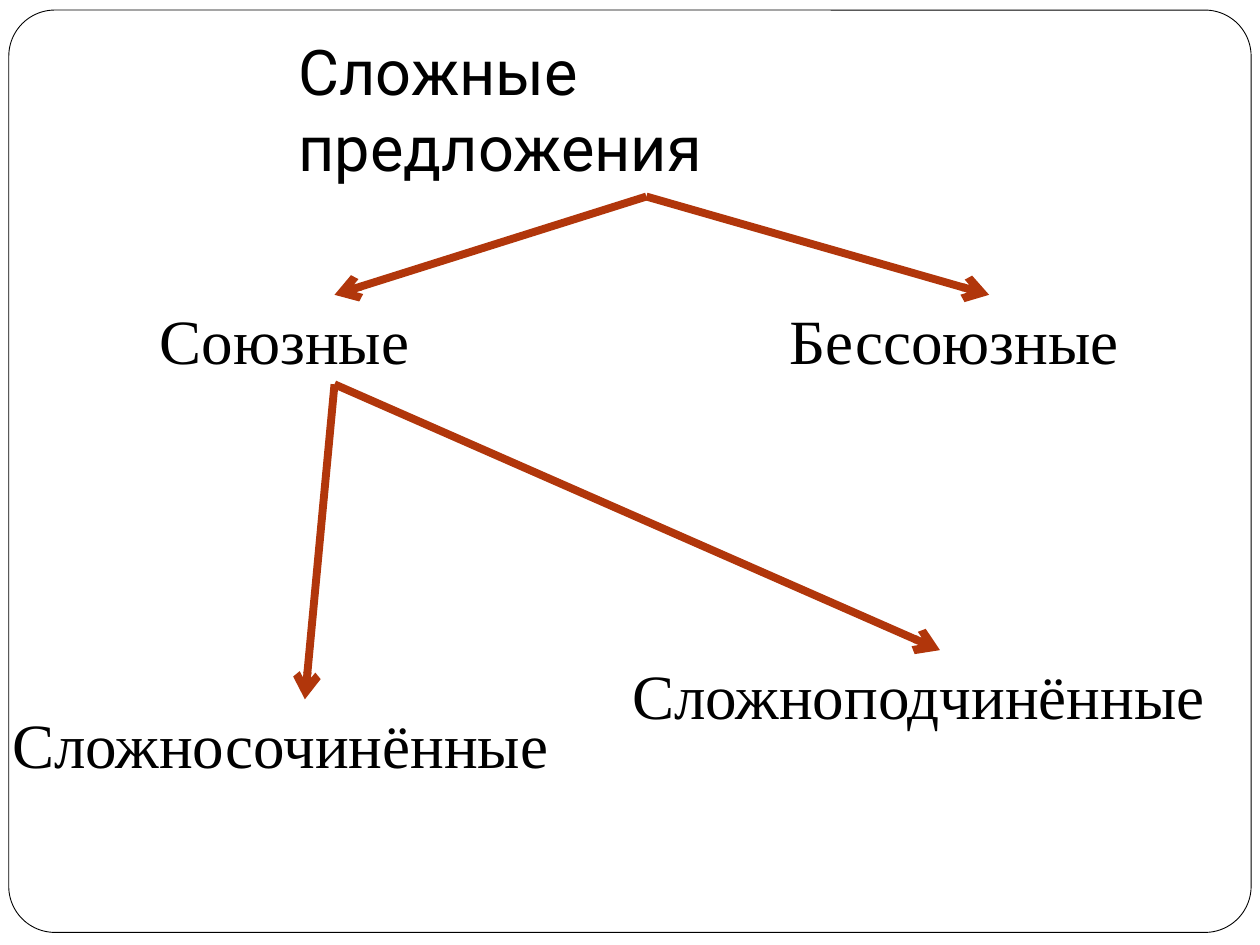
from dataclasses import dataclass

from lxml import etree
from pptx import Presentation
from pptx import util as u
from pptx.dml.color import RGBColor
from pptx.enum import shapes, text
from pptx.oxml import ns


@dataclass(frozen=True)
class Theme:
    ink: RGBColor = RGBColor(0, 0, 0)
    paper: RGBColor = RGBColor(255, 255, 255)
    rust: RGBColor = RGBColor(0xB1, 0x36, 0x0B)
    size: u.Pt = u.Pt(36)
    head: str = "Roboto"
    body: str = "Times New Roman"
    thin: u.Pt = u.Pt(0.5)
    thick: u.Pt = u.Pt(4.5)


THEME = Theme()
LABELS = {
    "Союзные": (1.17, 2.34, 2.97, 0.71),
    "Бессоюзные": (6.17, 2.34, 3.36, 0.71),
    "Сложносочинённые": (0, 5.55, 4.84, 0.71),
    "Сложноподчинённые": (4.92, 5.16, 5.08, 0.71),
}
TITLE = "Сложные предложения"
LINKS = [
    ("Союзные", "Сложносочинённые"),
    ("Союзные", "Сложноподчинённые"),
    (TITLE, "Союзные"),
    (TITLE, "Бессоюзные"),
]


def assign(item, values):
    for name, value in values.items():
        setattr(item, name, value)


def inches(box):
    return [u.Inches(n) for n in box]


def write(shape, words, font, **frame):
    body = shape.text_frame
    assign(body, {"word_wrap": True, **frame})
    para = body.paragraphs[0]
    para.alignment = text.PP_ALIGN.LEFT
    run = para.add_run()
    run.text = words
    assign(run.font, {"name": font, "size": THEME.size})
    run.font.color.rgb = THEME.ink


def add_title(slide):
    title = slide.shapes.title
    assign(title, dict(zip(("left", "top", "width", "height"),
                           inches((2.27, 0.31, 5.72, 1.25)))))
    write(title, TITLE, THEME.head,
          auto_size=text.MSO_AUTO_SIZE.NONE,
          vertical_anchor=text.MSO_ANCHOR.BOTTOM,
          margin_bottom=u.Inches(0.1))
    return title


def add_frame(slide, title):
    frame = slide.shapes.add_shape(shapes.MSO_SHAPE.ROUNDED_RECTANGLE,
                                   *inches((0.07, 0.08, 9.86, 7.32)))
    frame.adjustments[0] = 0.05
    frame.shadow.inherit = False
    frame.fill.solid()
    frame.fill.fore_color.rgb = THEME.paper
    frame.line.color.rgb = THEME.ink
    frame.line.width = THEME.thin
    title.element.addprevious(frame.element)


def add_label(slide, words, box):
    label = slide.shapes.add_textbox(*inches(box))
    write(label, words, THEME.body,
          auto_size=text.MSO_AUTO_SIZE.SHAPE_TO_FIT_TEXT)
    return label


def add_arrow(slide, start, end):
    arrow = slide.shapes.add_connector(shapes.MSO_CONNECTOR.STRAIGHT,
                                       0, 0, 0, 0)
    arrow.begin_connect(start, 2)
    arrow.end_connect(end, 0)
    arrow.line.color.rgb = THEME.rust
    arrow.line.width = THEME.thick
    props = arrow.element.spPr
    etree.SubElement(props.find(ns.qn("a:ln")), ns.qn("a:tailEnd"),
                     type="arrow")
    etree.SubElement(props, ns.qn("a:effectLst"))


def main():
    deck = Presentation()
    assign(deck, {"slide_width": u.Inches(10), "slide_height": u.Inches(7.5)})
    slide = deck.slides.add_slide(deck.slide_layouts.get_by_name("Title Only"))
    title = add_title(slide)
    add_frame(slide, title)
    nodes = {TITLE: title}
    for words, box in LABELS.items():
        nodes[words] = add_label(slide, words, box)
    for start, end in LINKS:
        add_arrow(slide, nodes[start], nodes[end])
    deck.save("out.pptx")


if __name__ == "__main__":
    main()
